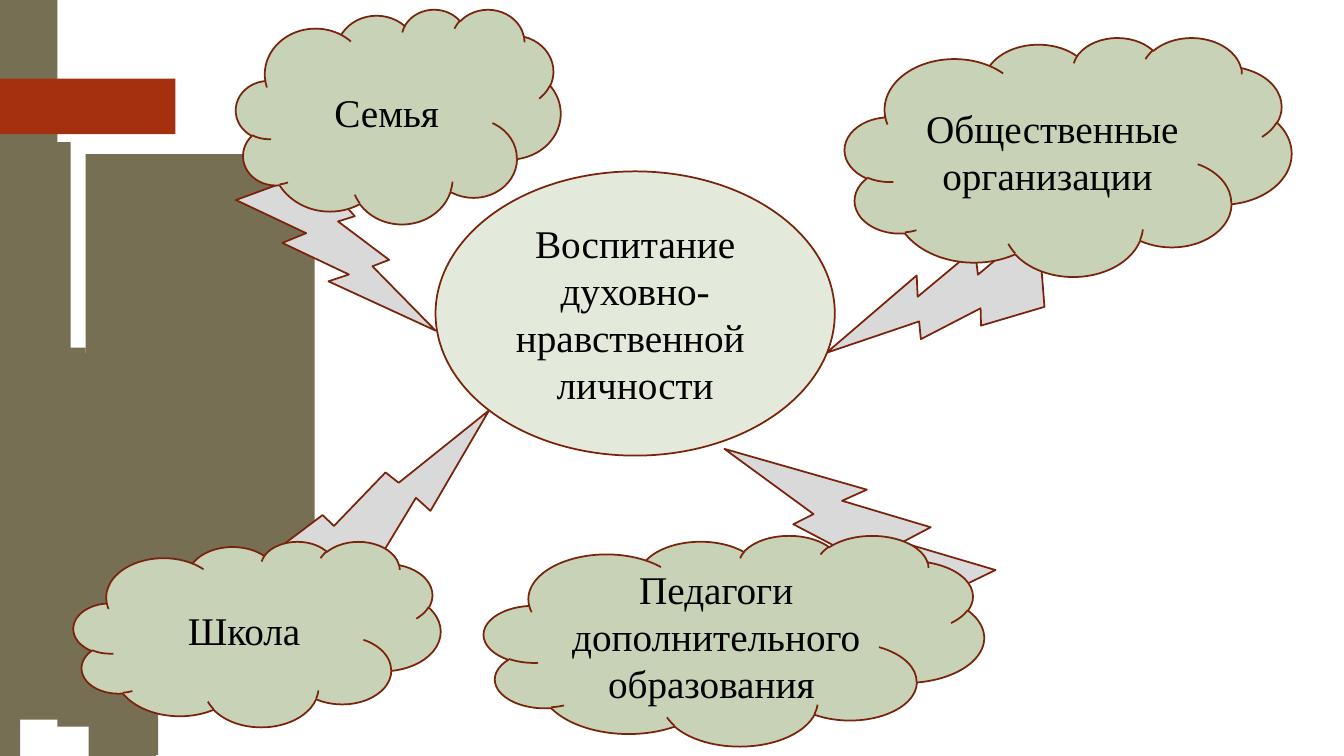
from pptx import Presentation
from pptx.dml.color import RGBColor
from pptx.enum.shapes import MSO_SHAPE
from pptx.enum.text import MSO_ANCHOR, PP_ALIGN
from pptx.util import Inches, Pt

OLIVE, RUST, OUTLINE = "766F54", "A53010", "7A230B"
BOLT_FILL, CENTRE_FILL, CLOUD_FILL, TEXT_COLOUR = "D9D9D9", "E3E9DB", "C7D2B7", "000000"
FONT_NAME, FONT_SIZE = "Times New Roman", 28

OLIVE_BLOCKS = [
    (0, 2.82, 0.11, 0.68), (0.14, 3.45, 0.71, 2.54), (0.88, 5.96, 0.67, 1.55),
    (1.05, 7.11, 0.19, 0.4), (0.11, 3.5, 0.9, 3.64), (0.85, 1.53, 2.27, 4.43),
    (1.01, 7.14, 0.18, 0.37), (0.93, 6.83, 0.26, 0.68), (0.03, 0, 0.54, 4.81),
    (0.6, 4.72, 0.46, 1.73), (1.1, 6.41, 0.47, 1.08), (0.57, 4.77, 0.6, 2.44),
    (0.51, 1.41, 0.19, 3.31), (1.22, 7.19, 0.15, 0.31), (0.55, 4.49, 0.09, 0.56),
    (1.06, 3.44, 1.54, 2.97), (1.17, 7.22, 0.13, 0.28), (1.06, 6.45, 0.15, 0.74),
    (1.06, 6.31, 0.04, 0.25), (1.1, 6.91, 0.23, 0.58), (0, 0, 0.2, 7.5),
]
RUST_BAR = (0, 0.78, 1.74, 0.55)

BOLTS_BEHIND_CENTRE = [
    ((2.34, 1.7, 1.98, 1.58), 0),
    ((3, 3.84, 1.56, 2.57), 256.7),
    ((8.45, 1.98, 1.91, 1.88), 109.8),
]
CENTRE = ((4.32, 1.7, 3.96, 2.82), "Воспитание\nдуховно- нравственной \nличности")
BOLTS_OVER_CENTRE = [((7.29, 4.29, 2.52, 1.86), 172.9)]
CLOUDS = [
    ((2.34, 0.09, 3.22, 2.13), "Семья"),
    ((0.73, 5.37, 3.64, 1.84), "Школа"),
    ((4.8, 5.31, 4.96, 2.09), "Педагоги\nдополнительного\nобразования "),
    ((8.38, 0.37, 4.43, 2.37), "Общественные\nорганизации "),
]


def colour(hex_string):
    return RGBColor.from_string(hex_string)


def add_block(slide, kind, box, fill, outline=None):
    shape = slide.shapes.add_shape(kind, *[Inches(length) for length in box])
    shape.shadow.inherit = False
    shape.fill.solid()
    shape.fill.fore_color.rgb = colour(fill)
    if outline:
        shape.line.color.rgb = colour(outline)
        shape.line.width = Pt(1.25)
    else:
        shape.line.fill.background()
    return shape


def add_bolts(slide, bolts):
    for box, rotation in bolts:
        shape = add_block(slide, MSO_SHAPE.LIGHTNING_BOLT, box, BOLT_FILL, OUTLINE)
        shape.rotation = rotation


def add_label(slide, kind, box, fill, text):
    shape = add_block(slide, kind, box, fill, OUTLINE)
    text_frame = shape.text_frame
    text_frame.text = text
    text_frame.word_wrap = True
    text_frame.vertical_anchor = MSO_ANCHOR.MIDDLE
    for paragraph in text_frame.paragraphs:
        paragraph.alignment = PP_ALIGN.CENTER
        for run in paragraph.runs:
            run.font.name = FONT_NAME
            run.font.size = Pt(FONT_SIZE)
            run.font.color.rgb = colour(TEXT_COLOUR)


def main():
    presentation = Presentation()
    presentation.slide_width = Inches(13.33)
    presentation.slide_height = Inches(7.5)
    slide = presentation.slides.add_slide(presentation.slide_layouts[6])

    for box in OLIVE_BLOCKS:
        add_block(slide, MSO_SHAPE.RECTANGLE, box, OLIVE)
    add_block(slide, MSO_SHAPE.RECTANGLE, RUST_BAR, RUST)

    add_bolts(slide, BOLTS_BEHIND_CENTRE)
    centre_box, centre_text = CENTRE
    add_label(slide, MSO_SHAPE.OVAL, centre_box, CENTRE_FILL, centre_text)
    add_bolts(slide, BOLTS_OVER_CENTRE)
    for box, text in CLOUDS:
        add_label(slide, MSO_SHAPE.CLOUD, box, CLOUD_FILL, text)

    presentation.save("out.pptx")


if __name__ == "__main__":
    main()
